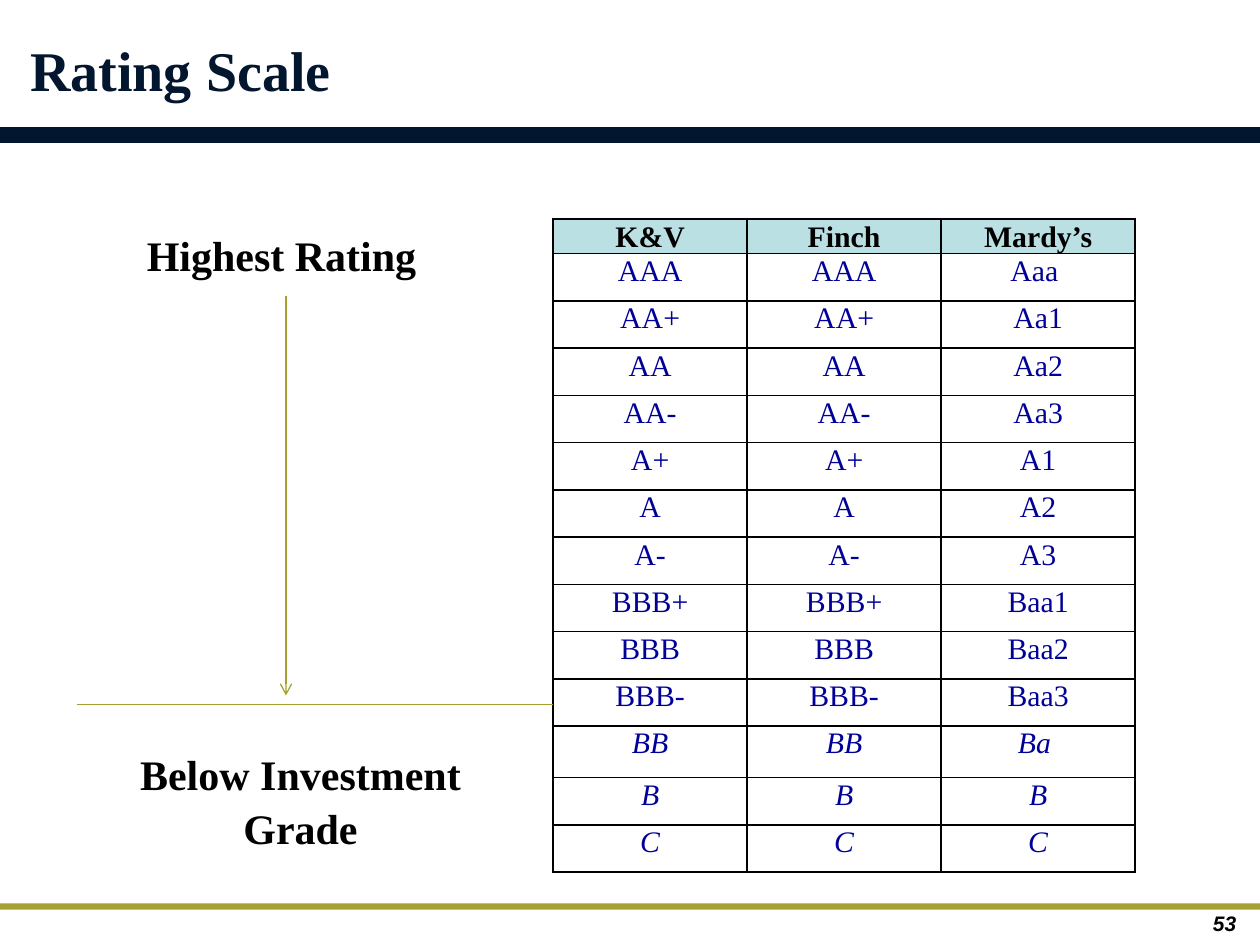
"""Build the rating scale slide: a table of three agencies' grades beside an arrow."""
from lxml import etree
from pptx import Presentation, util as u
from pptx.dml.color import RGBColor
from pptx.enum import shapes, text
from pptx.oxml import parse_xml
from pptx.oxml.ns import nsdecls, qn

TITLE = "Rating Scale"
PAGE = "53"
AGENCIES = ["K&V", "Finch", "Mardy’s"]
GRADES = [
    ("AAA", "Aaa "), ("AA+", "Aa1"), ("AA", "Aa2"), ("AA-", "Aa3"),
    ("A+", "A1"), ("A", "A2"), ("A-", "A3"),
    ("BBB+", "Baa1"), ("BBB", "Baa2"), ("BBB-", "Baa3"),
    ("BB", "Ba "), ("B", "B"), ("C", "C"),
]
BELOW_GRADE = ["BB", "B", "C"]
LABELS = [
    ("Highest Rating", 0.91, 1.76, 2.65, 0.39),
    ("Below Investment Grade", 0.68, 5.88, 3.41, 0.8),
]
BANDS = [("olive", 7.17, 0.05), ("navy", 1.02, 0.1)]
LINES = [((0.61, 5.59), (4.39, 5.59), False), ((2.27, 2.35), (2.27, 5.52), True)]
TABLE = dict(left=4.39, top=1.74, width=4.62, height=5.18, head=0.27, tall=0.41)
THEME = dict(
    serif="Times New Roman", sans="Arial",
    navy="03162F", olive="A7A133", rule="A6A02F", head="BBE0E3", grade="000099", black="000000",
    title=32, label=24, cell=17, page=12,
)


def write(tf, words, size, color, align, face="serif", bold=True, italic=False):
    tf.word_wrap = True
    p = tf.paragraphs[0]
    p.text, p.alignment = words, align
    f = p.font
    f.name, f.size, f.bold, f.italic = THEME[face], u.Pt(THEME[size]), bold, italic
    f.color.rgb = RGBColor.from_string(THEME[color])
    return p


def add_text(s, box, *args, **kwargs):
    tf = s.shapes.add_textbox(*map(u.Inches, box)).text_frame
    p = write(tf, *args, **kwargs)
    return tf, p


def add_band(s, color, top, height):
    sp = s.shapes.add_shape(shapes.MSO_SHAPE.RECTANGLE, 0, u.Inches(top), u.Inches(10), u.Inches(height))
    sp.shadow.inherit = False
    sp.fill.solid()
    sp.fill.fore_color.rgb = RGBColor.from_string(THEME[color])
    if color == "navy":
        sp.line.color.rgb = RGBColor.from_string(THEME[color])
        sp.line.width = u.Pt(2)
    else:
        sp.line.fill.background()


def add_line(s, start, end, arrow):
    cx = s.shapes.add_connector(shapes.MSO_CONNECTOR.STRAIGHT, *map(u.Inches, start + end))
    cx.line.color.rgb = RGBColor.from_string(THEME["rule"])
    cx.line.width = u.Pt(0.75)
    if arrow:
        etree.SubElement(cx.line._get_or_add_ln(), qn("a:tailEnd"), type="arrow")
    etree.SubElement(cx._element.spPr, qn("a:effectLst"))


def set_borders(cell, widths):
    tc_pr = cell._tc.get_or_add_tcPr()
    for i, (side, width) in enumerate(zip("LRTB", widths)):
        tc_pr.insert(i, parse_xml(
            f'<a:ln{side} {nsdecls("a")} w="{u.Pt(width)}"><a:solidFill>'
            f'<a:srgbClr val="{THEME["black"]}"/></a:solidFill></a:ln{side}>'))


def add_grades(s):
    rows = [AGENCIES] + [(grade, grade, other) for grade, other in GRADES]
    box = [u.Inches(TABLE[k]) for k in ("left", "top", "width", "height")]
    tbl = s.shapes.add_table(len(rows), len(AGENCIES), *box).table
    plain = (TABLE["height"] - TABLE["head"] - TABLE["tall"]) / (len(rows) - 2)
    heights = {0: TABLE["head"], len(rows) - len(BELOW_GRADE): TABLE["tall"]}
    for r, row in enumerate(rows):
        tbl.rows[r].height = u.Inches(heights.get(r, plain))
        head = r == 0
        for c, words in enumerate(row):
            cell = tbl.cell(r, c)
            cell.margin_left = cell.margin_right = cell.margin_top = u.Inches(0.01)
            cell.margin_bottom = 0
            write(cell.text_frame, words, "cell", "black" if head else "grade", text.PP_ALIGN.CENTER,
                  bold=head, italic=row[0] in BELOW_GRADE)
            if head:
                cell.fill.solid()
                cell.fill.fore_color.rgb = RGBColor.from_string(THEME["head"])
            else:
                cell.fill.background()
            heavy = (c == 2, c == 1, head, r == len(rows) - 1)
            set_borders(cell, [1.5 if h else 1 for h in heavy])


def main():
    prs = Presentation()
    prs.slide_width, prs.slide_height = u.Inches(10), u.Inches(7.5)
    s = prs.slides.add_slide(prs.slide_layouts[5])
    for band in BANDS:
        add_band(s, *band)
    add_grades(s)
    for words, *box in LABELS:
        tf, p = add_text(s, box, words, "label", "black", text.PP_ALIGN.CENTER)
        tf.margin_top = tf.margin_bottom = u.Inches(0.04)
        p.line_spacing = 1.06
    for line in LINES:
        add_line(s, *line)
    tf, p = add_text(s, (9.17, 7.16, 0.74, 0.33), PAGE, "page", "black", text.PP_ALIGN.RIGHT,
                     face="sans", italic=True)
    tf.vertical_anchor = text.MSO_ANCHOR.MIDDLE
    title = s.shapes.title
    title.left, title.top, title.width, title.height = map(u.Inches, (0.14, -0.08, 9.71, 1.25))
    write(title.text_frame, TITLE, "title", "navy", text.PP_ALIGN.LEFT)
    title.text_frame.vertical_anchor = text.MSO_ANCHOR.MIDDLE
    prs.save("out.pptx")


if __name__ == "__main__":
    main()
